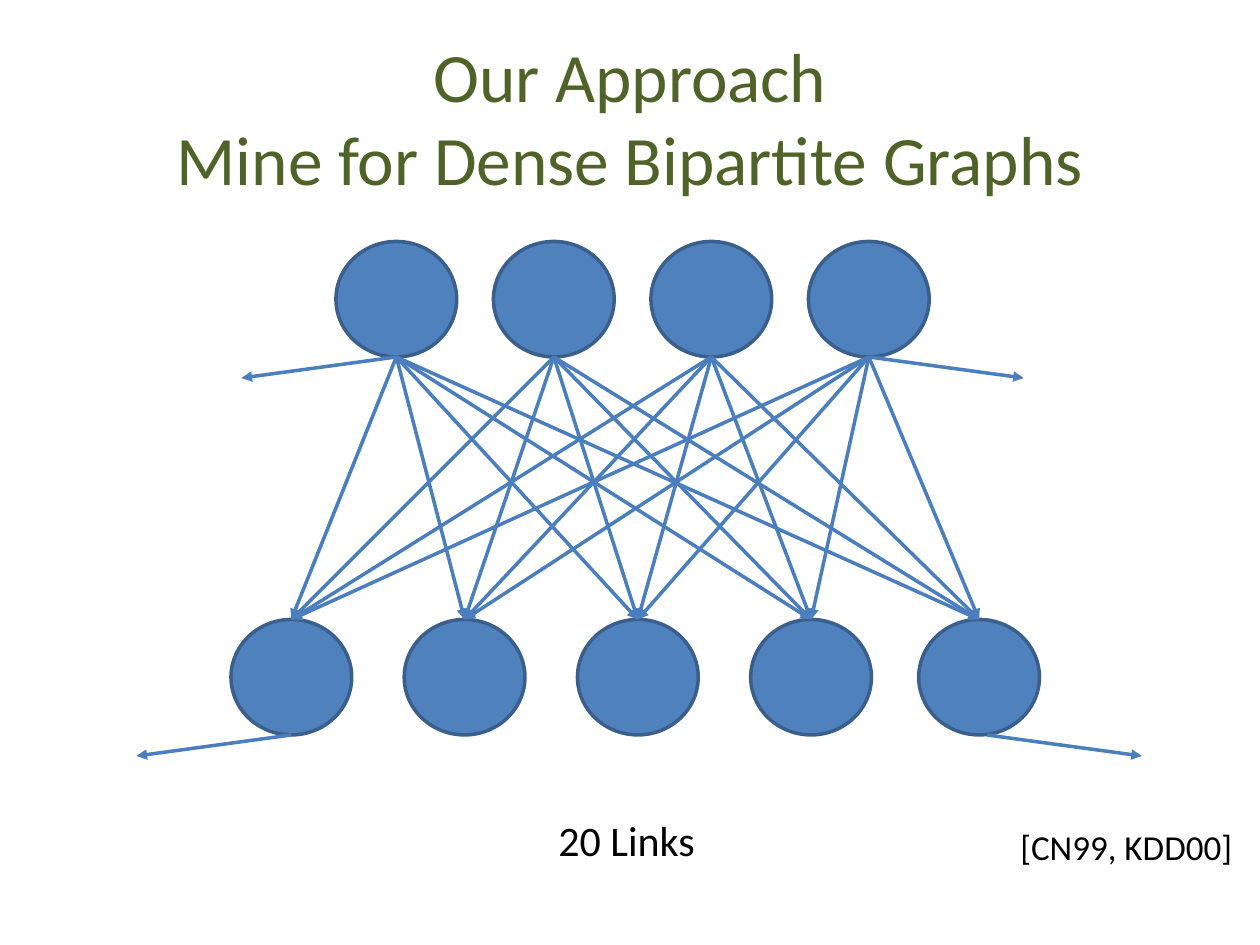
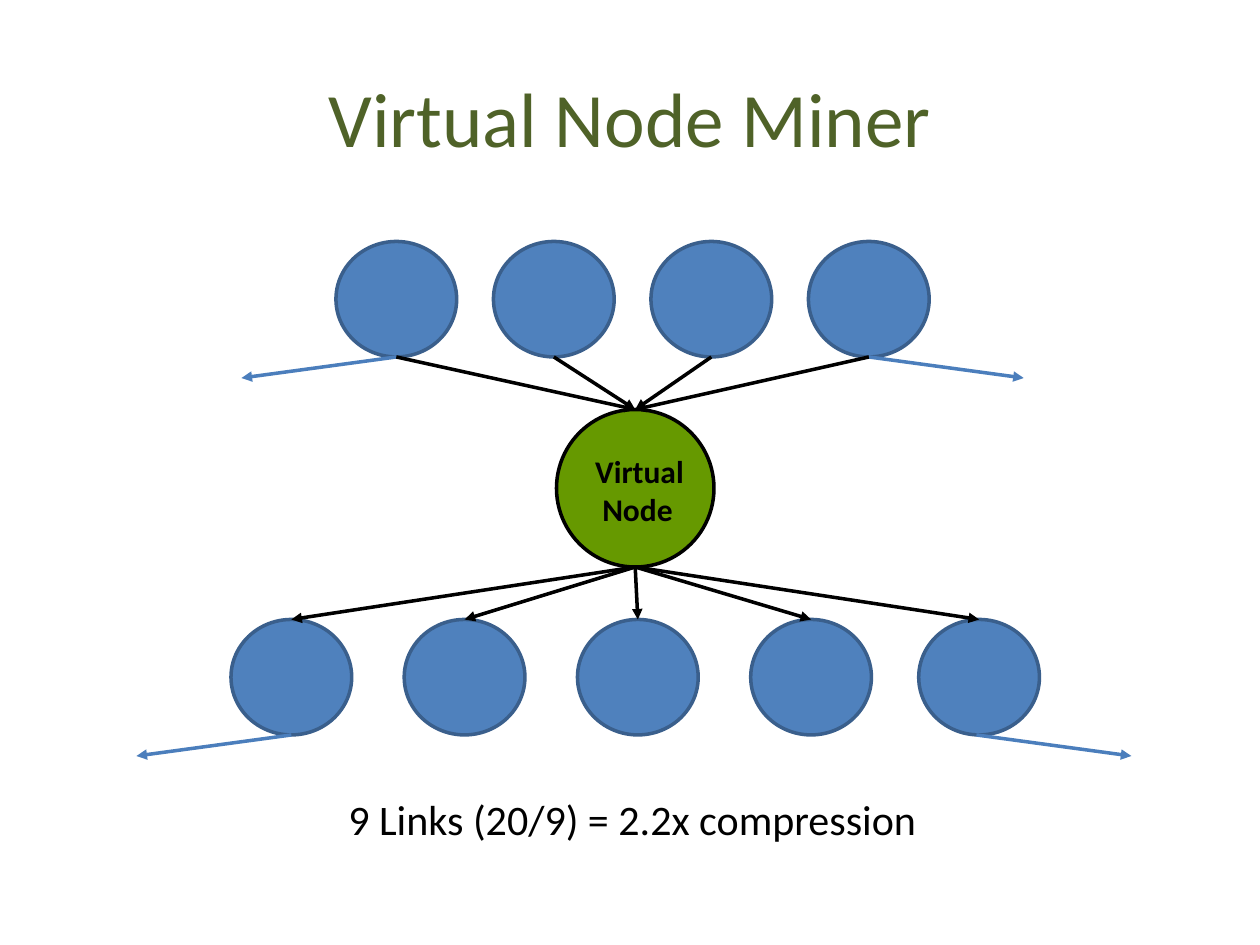
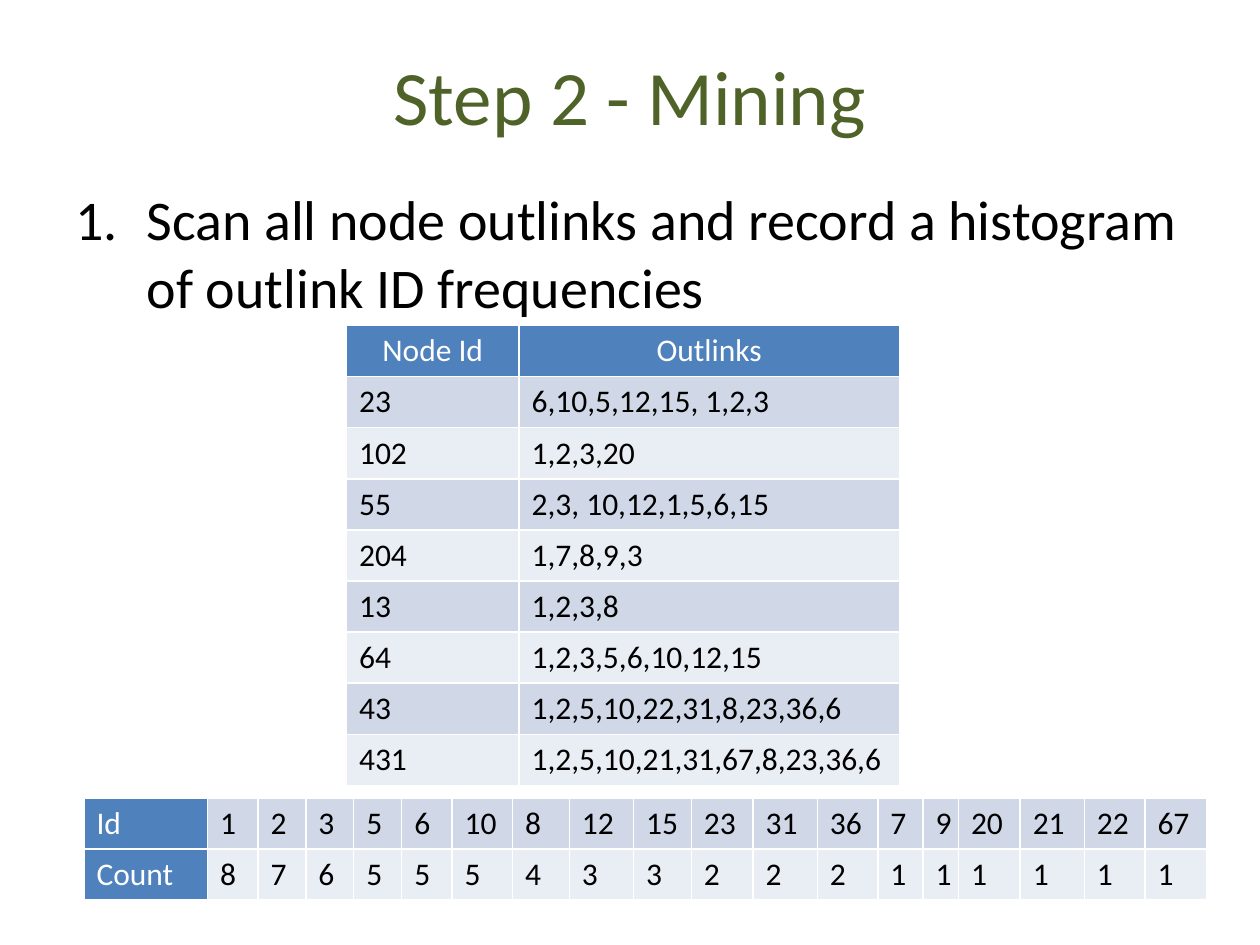
import collections
import dataclasses

import pptx
import pptx.dml.color
import pptx.enum.shapes
import pptx.enum.text
import pptx.oxml.ns
import pptx.util
from lxml import etree

Pt = pptx.util.Pt
Align = pptx.enum.text.PP_ALIGN
Fit = pptx.enum.text.MSO_AUTO_SIZE
Box = collections.namedtuple("Box", "x y w h")


@dataclasses.dataclass(frozen=True)
class Theme:
    font: str = "Calibri"
    title: str = "4F6228"
    ink: str = "000000"
    paper: str = "FFFFFF"
    node: str = "4F81BD"
    edge: str = "3A5F8C"
    link: str = "4B7EBC"
    hub: str = "669900"
    bands: tuple = ("D0D8E8", "E9EDF4")
    head: float = 44
    long: float = 39.6
    body: float = 32
    note: float = 24
    cite: float = 20
    cell: float = 18
    line: float = 2


THEME = Theme()
TITLE = Box(36, 21.6, 648, 90)
GRAPH = Box(78, 138, 578, 294)
NODE = (69, 66)
UPPER = [114 + 90 * i for i in range(4)]
LOWER = [54 + 99 * i for i in range(4)] + [447]
DROP = 216
STUB = (88.5, 12)
HUB = Box(240, 96, 90, 90)

LINKS = [
    ("Node Id", "Outlinks"),
    ("23", "6,10,5,12,15, 1,2,3"),
    ("102", "1,2,3,20"),
    ("55", "2,3, 10,12,1,5,6,15"),
    ("204", "1,7,8,9,3"),
    ("13", "1,2,3,8"),
    ("64", "1,2,3,5,6,10,12,15"),
    ("43", "1,2,5,10,22,31,8,23,36,6"),
    ("431", "1,2,5,10,21,31,67,8,23,36,6"),
]
COUNTS = [
    "Id 1 2 3 5 6 10 8 12 15 23 31 36 7 9 20 21 22 67".split(),
    "Count 8 7 6 5 5 5 4 3 3 2 2 2 1 1 1 1 1 1".split(),
]
WIDTHS = [70.6, 28.8, 27.4, 27.4, 27.4, 28.8, 34.6, 32.4, 36.7, 33.1,
          35.3, 36.7, 34.6, 25.9, 20.2, 35.3, 36.7, 34.6, 35.3]


def color(code):
    return pptx.dml.color.RGBColor.from_string(code)


def points(*sizes):
    return [Pt(size) for size in sizes]


def sub(parent, tag, **attrs):
    return etree.SubElement(parent, pptx.oxml.ns.qn(tag), attrs)


def write(frame, text, size=THEME.note, ink=THEME.ink, bold=False, align=None):
    frame.text = text
    for para in frame.paragraphs:
        para.alignment = align
        for run in para.runs:
            font = run.font
            font.name, font.size, font.bold = THEME.font, Pt(size), bold
            font.color.rgb = color(ink)


def place(shape, box):
    shape.left, shape.top, shape.width, shape.height = points(*box)


def head(slide, text, box=TITLE, size=THEME.head):
    place(slide.shapes.title, box)
    frame = slide.shapes.title.text_frame
    frame.auto_size = Fit.NONE
    write(frame, text, size=size, ink=THEME.title, align=Align.CENTER)


def label(slide, text, box, wrap=False, **form):
    frame = slide.shapes.add_textbox(*points(*box)).text_frame
    frame.word_wrap = wrap
    frame.auto_size = Fit.SHAPE_TO_FIT_TEXT
    write(frame, text, **form)


def disc(slide, box, fill=THEME.node, edge=THEME.edge):
    kind = pptx.enum.shapes.MSO_SHAPE.FLOWCHART_CONNECTOR
    shape = slide.shapes.add_shape(kind, *points(*box))
    shape.shadow.inherit = False
    shape.fill.solid()
    shape.fill.fore_color.rgb = color(fill)
    shape.line.color.rgb = color(edge)
    shape.line.width = Pt(THEME.line)


def arrow(slide, start, end, ink=THEME.link):
    kind = pptx.enum.shapes.MSO_CONNECTOR.STRAIGHT
    wire = slide.shapes.add_connector(kind, *points(*start, *end))
    wire.line.color.rgb = color(ink)
    wire.line.width = Pt(THEME.line)
    props = wire.element.spPr
    sub(props.find(pptx.oxml.ns.qn("a:ln")), "a:tailEnd", type="triangle")
    sub(props, "a:effectLst")


def row(slide, box, lefts, drop=0, shift=0):
    """Draw a row of nodes with an outgoing stub at each end.

    Returns the top and the bottom points of the nodes.
    """
    wide, high = NODE
    top = box.y + drop
    mids = [box.x + left + wide / 2 for left in lefts]
    for left in lefts:
        disc(slide, Box(box.x + left, top, wide, high))
    base = top + high
    for x, side in ((mids[0], -1), (mids[-1] + shift, 1)):
        arrow(slide, (x, base), (x + side * STUB[0], base + STUB[1]))
    return [(x, top) for x in mids], [(x, base) for x in mids]


def rows(slide, box, shift):
    """Draw both rows; return the points that links leave and reach."""
    starts = row(slide, box, UPPER)[1]
    ends = row(slide, box, LOWER, DROP, shift)[0]
    return starts, ends


def dense(slide, box):
    starts, ends = rows(slide, box, 4.5)
    for start in starts:
        for end in ends:
            arrow(slide, start, end)


def virtual(slide, box):
    starts, ends = rows(slide, box, -1.5)
    hub = HUB._replace(x=box.x + HUB.x, y=box.y + HUB.y)
    mid = hub.x + hub.w / 2
    disc(slide, hub, THEME.hub, THEME.ink)
    for start in starts:
        arrow(slide, start, (mid, hub.y), THEME.ink)
    for end in ends:
        arrow(slide, (mid, hub.y + hub.h), end, THEME.ink)
    label(slide, "Virtual\n Node", Box(hub.x + 15, hub.y + 21, 70, 51),
          size=THEME.cell, bold=True)


def steps(slide, text, box):
    body = slide.placeholders[1]
    place(body, box)
    body.text_frame.auto_size = Fit.NONE
    write(body.text_frame, text, size=THEME.body)
    dent = Pt(40.5)
    for para in body.text_frame.paragraphs:
        props = para._p.get_or_add_pPr()
        props.set("marL", str(dent))
        props.set("indent", str(-dent))
        sub(props, "a:buFont", typeface="+mj-lt")
        sub(props, "a:buAutoNum", type="arabicPeriod")


def border(cell):
    props = cell._tc.get_or_add_tcPr()
    for side in "LRTB":
        line = sub(props, "a:ln" + side, w=str(Pt(1)))
        sub(sub(line, "a:solidFill"), "a:srgbClr", val=THEME.paper)


def grid(slide, data, box, widths, across=True):
    """Add a banded table, headed by its first row or its first column."""
    frame = slide.shapes.add_table(len(data), len(widths), *points(*box))
    table = frame.table
    table.first_row, table.first_col = across, not across
    for col, width in zip(table.columns, widths):
        col.width = Pt(width)
    for r, line in enumerate(data):
        table.rows[r].height = Pt(box.h / len(data))
        for c, text in enumerate(line):
            top = (r if across else c) == 0
            cell = table.cell(r, c)
            border(cell)
            cell.fill.solid()
            band = THEME.bands[(r - across) % 2]
            cell.fill.fore_color.rgb = color(THEME.node if top else band)
            write(cell.text_frame, text, size=THEME.cell,
                  ink=THEME.paper if top else THEME.ink,
                  align=Align.CENTER if top and across else None)


def main():
    deck = pptx.Presentation()
    deck.slide_width, deck.slide_height = points(720, 540)
    plain, listed = deck.slide_layouts[5], deck.slide_layouts[1]

    slide = deck.slides.add_slide(plain)
    head(slide, "Our Approach\vMine for Dense Bipartite Graphs",
         size=THEME.long)
    dense(slide, GRAPH)
    label(slide, "20 Links", Box(312, 462, 103, 36))
    label(slide, "[CN99, KDD00]", Box(576, 468, 136, 32), size=THEME.cite)

    slide = deck.slides.add_slide(plain)
    head(slide, "Virtual Node Miner")
    virtual(slide, GRAPH)
    label(slide, "9 Links (20/9) = 2.2x compression",
          Box(192, 450, 474, 36), wrap=True)

    slide = deck.slides.add_slide(listed)
    head(slide, "Step 2 - Mining", TITLE._replace(y=6, h=96))
    steps(slide, "Scan all node outlinks and record a histogram "
          "of outlink ID frequencies", Box(36, 102, 648, 360))
    grid(slide, LINKS, Box(198, 186, 316, 262.8), [98.6, 217.4])
    grid(slide, COUNTS, Box(48, 456, 641, 58.4), WIDTHS, across=False)

    deck.save("out.pptx")


if __name__ == "__main__":
    main()
